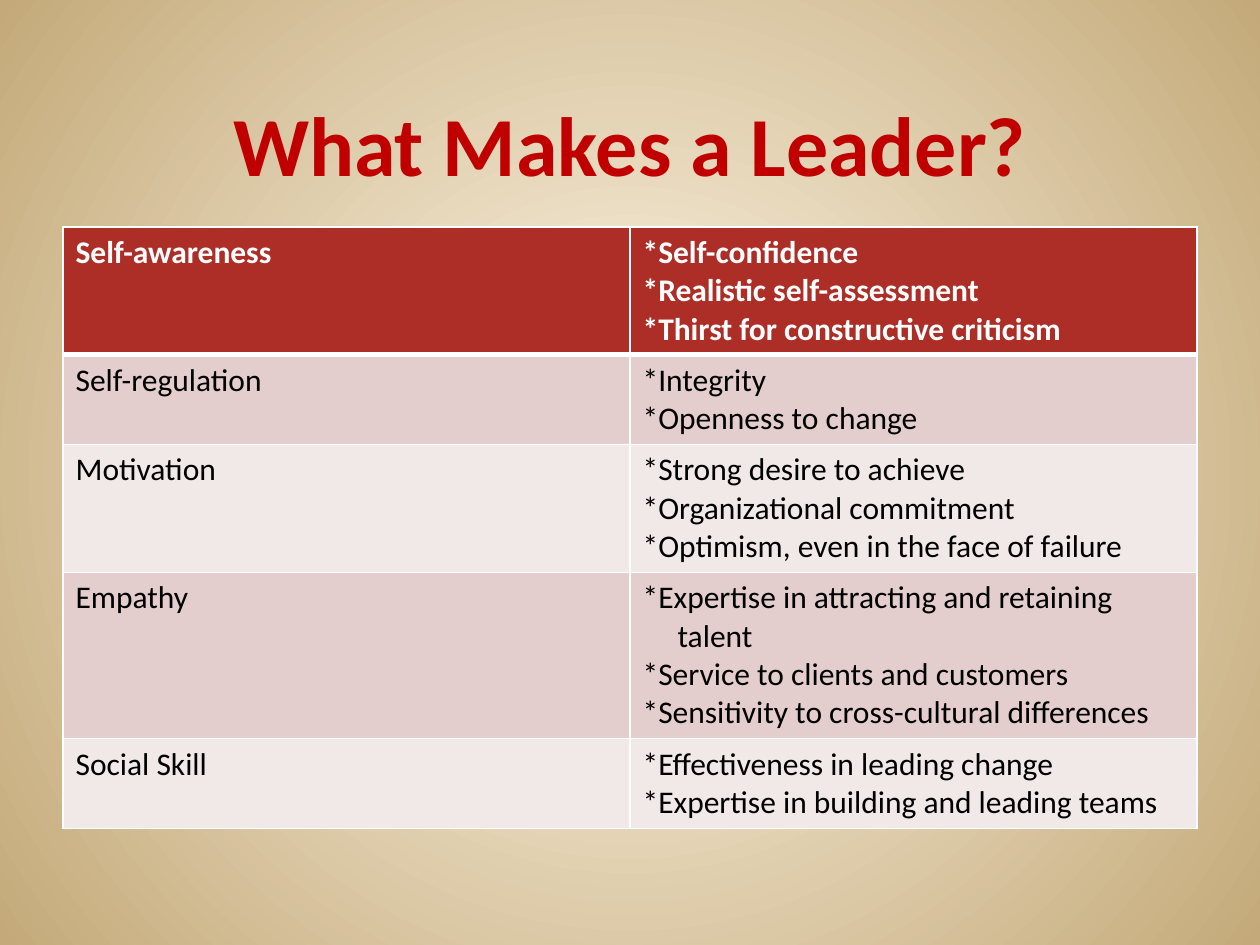
import pptx
import pptx.util
import pptx.dml.color
import pptx.enum.text
import pptx.oxml
import pptx.oxml.ns
from lxml import etree

Pt = pptx.util.Pt
qn = pptx.oxml.ns.qn

# Content
TITLE = "What Makes a Leader?"
CONTINUED = "talent"  # second line of the item above it
TRAITS = [
    ("Self-awareness", ["*Self-confidence", "*Realistic self-assessment",
                        "*Thirst for constructive criticism"]),
    ("Self-regulation", ["*Integrity", "*Openness to change"]),
    ("Motivation", ["*Strong desire to achieve", "*Organizational commitment",
                    "*Optimism, even in the face of failure"]),
    ("Empathy", ["*Expertise in attracting and retaining", CONTINUED,
                 "*Service to clients and customers",
                 "*Sensitivity to cross-cultural differences"]),
    ("Social Skill", ["*Effectiveness in leading change",
                      "*Expertise in building and leading teams"]),
]

THEME = {
    "font": "Calibri", "title_size": 48, "body_size": 18,
    "title": "C00000", "header": "AD2E27", "bands": ["E3CDCD", "F1E8E8"],
    "header_text": "FFFFFF", "body_text": "000000", "border": "FFFFFF",
    "background": ["FFF7E8", "C4AA7A"],
}

# Layout, in points
PAGE_WIDTH, PAGE_HEIGHT = 720, 540
MARGIN, CONTENT_WIDTH = 36, 648
TITLE_TOP, TITLE_HEIGHT = 24, 90
TABLE_TOP = 129.6
LINE_HEIGHT, ROW_PADDING = 21.6, 7.2
CONTINUED_INDENT = 20


def colour(name):
    return pptx.dml.color.RGBColor.from_string(name)


def format_span(span, size, text_colour, bold):
    values = {"name": THEME["font"], "size": Pt(size), "bold": bold}
    for key, value in values.items():
        setattr(span.font, key, value)
    span.font.color.rgb = colour(text_colour)


def set_border(cell, side, width):
    line = etree.SubElement(cell._tc.get_or_add_tcPr(), qn("a:" + side),
                            w=str(int(Pt(width))))
    fill = etree.SubElement(line, qn("a:solidFill"))
    etree.SubElement(fill, qn("a:srgbClr"), val=THEME["border"])


def paint_background(page):
    fill = page.background.fill
    fill.gradient()
    for stop, name, position in zip(fill.gradient_stops, THEME["background"], (0, 1)):
        stop.color.rgb = colour(name)
        stop.position = position
    # Radial from the centre in place of the linear default
    gradient = page.element.find(".//" + qn("a:gradFill"))
    gradient.remove(gradient.find(qn("a:lin")))
    circle = etree.SubElement(gradient, qn("a:path"), {"path": "circle"})
    etree.SubElement(circle, qn("a:fillToRect"),
                     {side: "50000" for side in "ltrb"})


def add_title(page):
    box = page.shapes.title
    place = {"left": MARGIN, "top": TITLE_TOP,
             "width": CONTENT_WIDTH, "height": TITLE_HEIGHT}
    for key, value in place.items():
        setattr(box, key, Pt(value))
    box.text_frame.vertical_anchor = pptx.enum.text.MSO_ANCHOR.BOTTOM
    para = box.text_frame.paragraphs[0]
    para.alignment = pptx.enum.text.PP_ALIGN.CENTER
    span = para.add_run()
    span.text = TITLE
    format_span(span, THEME["title_size"], THEME["title"], True)


def fill_cell(cell, lines, is_header, fill_colour):
    for side in ("lnL", "lnR", "lnT", "lnB"):
        set_border(cell, side, 3 if is_header and side == "lnB" else 1)
    cell.fill.solid()
    cell.fill.fore_color.rgb = colour(fill_colour)
    text_colour = THEME["header_text" if is_header else "body_text"]
    frame = cell.text_frame
    for index, line in enumerate(lines):
        para = frame.add_paragraph() if index else frame.paragraphs[0]
        if line == CONTINUED:
            para._p.get_or_add_pPr().set("marL", str(int(Pt(CONTINUED_INDENT))))
        span = para.add_run()
        span.text = line
        format_span(span, THEME["body_size"], text_colour, is_header)


def add_traits_table(page):
    heights = [len(items) * LINE_HEIGHT + ROW_PADDING for _, items in TRAITS]
    table = page.shapes.add_table(
        len(TRAITS), 2, Pt(MARGIN), Pt(TABLE_TOP),
        Pt(CONTENT_WIDTH), Pt(sum(heights))).table
    for row, (trait, items) in enumerate(TRAITS):
        table.rows[row].height = Pt(heights[row])
        is_header = row == 0
        fill_colour = THEME["header"] if is_header else THEME["bands"][(row - 1) % 2]
        for column, lines in enumerate(([trait], items)):
            fill_cell(table.cell(row, column), lines, is_header, fill_colour)


def main():
    deck = pptx.Presentation()
    deck.slide_width, deck.slide_height = Pt(PAGE_WIDTH), Pt(PAGE_HEIGHT)
    page = deck.slides.add_slide(deck.slide_layouts.get_by_name("Title Only"))
    paint_background(page)
    add_title(page)
    add_traits_table(page)
    deck.save("out.pptx")


if __name__ == "__main__":
    main()
